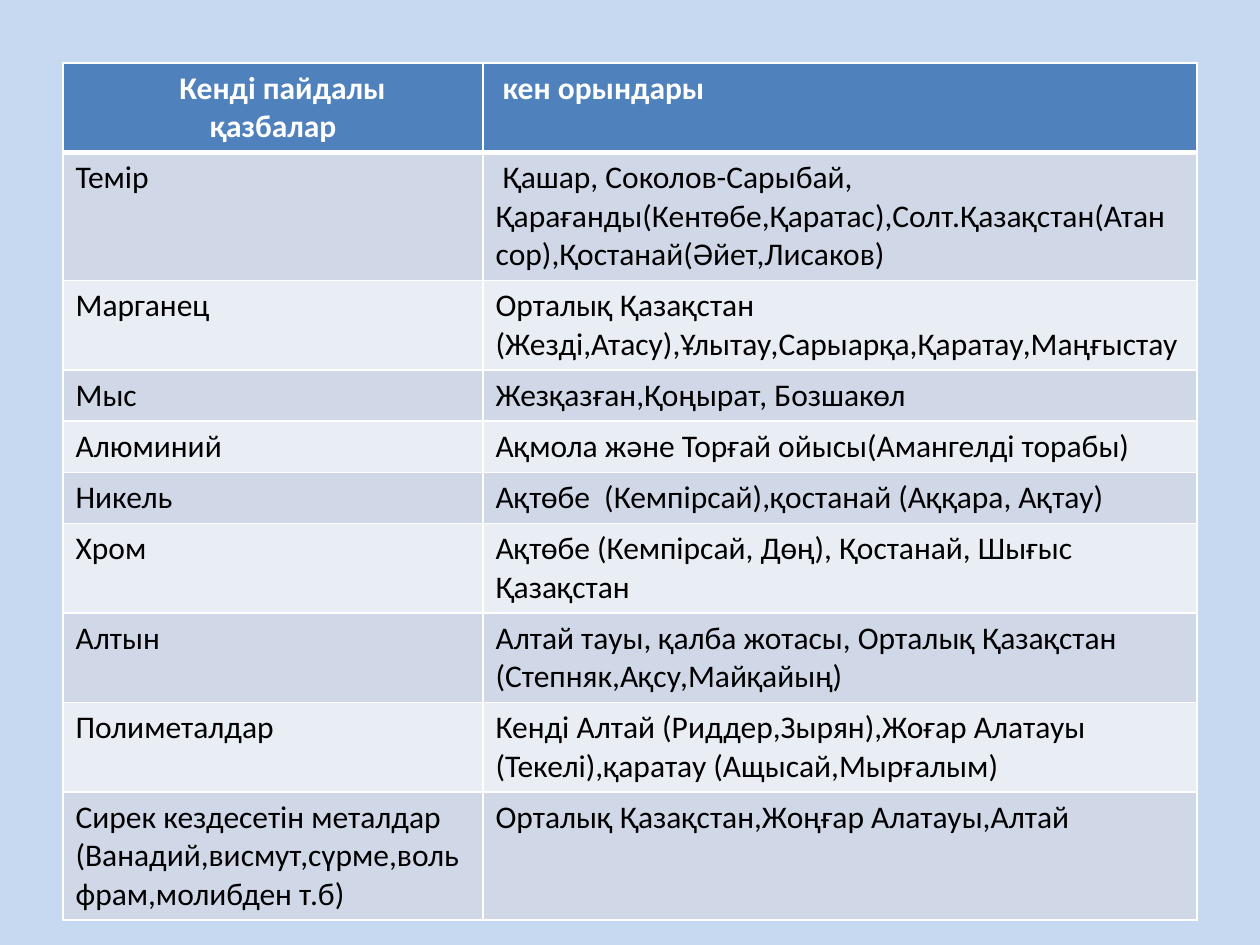
from lxml import etree
from pptx import Presentation
from pptx.dml.color import RGBColor
from pptx.enum.text import PP_ALIGN
from pptx.oxml.ns import qn
from pptx.util import Pt

CENTER = PP_ALIGN.CENTER
FONT = "Calibri"
COLORS = {
    "back": "C6D9F1",
    "head": "4F81BD",
    "odd": "D0D8E8",
    "even": "E9EDF4",
    "white": "FFFFFF",
    "black": "000000",
}
ROWS = [
    (2, "Кенді пайдалы\vқазбалар", " кен орындары"),
    (3, "Темір", " Қашар, Соколов-Сарыбай, Қарағанды(Кентөбе,Қаратас),Солт.Қазақстан(Атан\n"
        "сор),Қостанай(Әйет,Лисаков)"),
    (2, "Марганец", "Орталық Қазақстан (Жезді,Атасу),Ұлытау,Сарыарқа,Қаратау,Маңғыстау"),
    (1, "Мыс", "Жезқазған,Қоңырат, Бозшакөл"),
    (1, "Алюминий", "Ақмола және Торғай ойысы(Амангелді торабы)"),
    (1, "Никель", "Ақтөбе  (Кемпірсай),қостанай (Аққара, Ақтау)"),
    (2, "Хром", "Ақтөбе (Кемпірсай, Дөң), Қостанай, Шығыс Қазақстан"),
    (2, "Алтын", "Алтай тауы, қалба жотасы, Орталық Қазақстан (Степняк,Ақсу,Майқайың)"),
    (2, "Полиметалдар", "Кенді Алтай (Риддер,Зырян),Жоғар Алатауы (Текелі),қаратау (Ащысай,Мырғалым)"),
    (3, "Сирек кездесетін металдар (Ванадий,висмут,сүрме,вольфрам,молибден т.б)",
        "Орталық Қазақстан,Жоңғар Алатауы,Алтай"),
]


def color(name):
    return RGBColor.from_string(COLORS[name])


def edge(cell, row):
    props = cell._tc.get_or_add_tcPr()
    for side in "LRTB":
        thick = (row, side) in ((0, "B"), (1, "T"))
        line = etree.SubElement(props, qn(f"a:ln{side}"), w=str(Pt(3 if thick else 1)))
        fill = etree.SubElement(line, qn("a:solidFill"))
        etree.SubElement(fill, qn("a:srgbClr"), val=COLORS["white"])


def write(cell, text, head):
    cell.text_frame.text = text
    for para in cell.text_frame.paragraphs:
        for run in para.runs:
            font = run.font
            font.name = FONT
            font.size = Pt(18)
            font.bold = head
            font.color.rgb = color("white" if head else "black")


def ore_table(slide, left, top, width, height):
    frame = slide.shapes.add_table(len(ROWS), 2, left, top, width, height)
    table = frame.table
    first = Pt(240)
    table.columns[0].width = first
    table.columns[1].width = width - first
    for row, (lines, *texts) in enumerate(ROWS):
        table.rows[row].height = Pt(6.5 + 21.6 * lines)
        shade = "head" if row == 0 else "odd" if row % 2 else "even"
        for col, text in enumerate(texts):
            cell = table.cell(row, col)
            edge(cell, row)
            cell.fill.solid()
            cell.fill.fore_color.rgb = color(shade)
            write(cell, text, row == 0)
    title = table.cell(0, 0).text_frame.paragraphs[0]
    title.alignment = CENTER
    title._p.get_or_add_pPr().set("indent", str(Pt(11)))


def main():
    deck = Presentation()
    deck.slide_width, deck.slide_height = Pt(720), Pt(540)
    slide = deck.slides.add_slide(deck.slide_layouts[6])
    slide.background.fill.solid()
    slide.background.fill.fore_color.rgb = color("back")
    ore_table(slide, Pt(36), Pt(36), Pt(648), Pt(482.4))
    deck.save("out.pptx")


if __name__ == "__main__":
    main()
